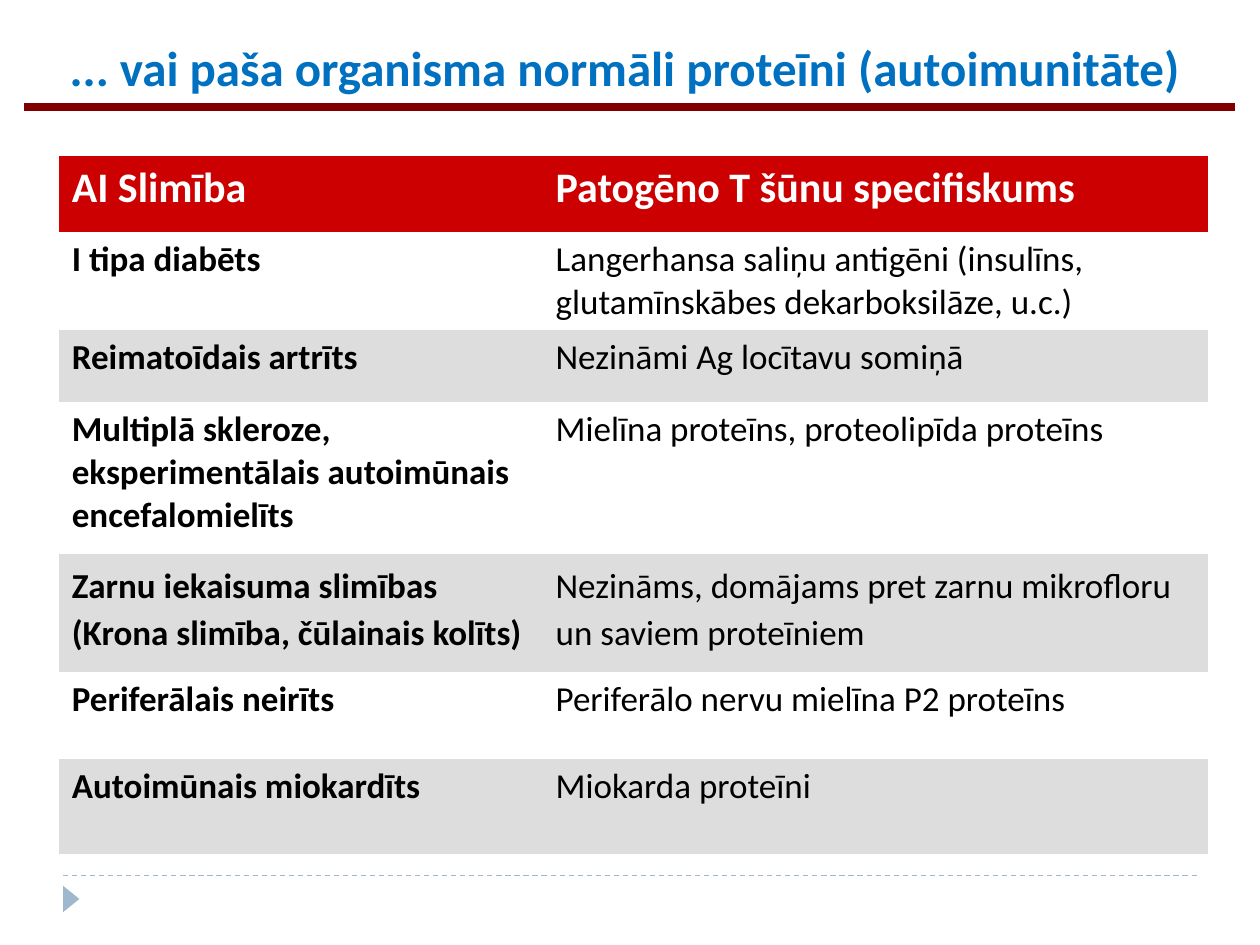
from lxml import etree
from pptx import Presentation
from pptx import util as u
from pptx.dml.color import RGBColor
from pptx.enum import dml, shapes, text
from pptx.oxml.ns import qn

WHITE = RGBColor(0xFF, 0xFF, 0xFF)
BLACK = RGBColor(0, 0, 0)
BLUE = RGBColor(0, 0x70, 0xC0)
RED = RGBColor(0xCC, 0, 0)
MAROON = RGBColor(0x80, 0, 0)
GREY = RGBColor(0xDD, 0xDD, 0xDD)
PALE_BLUE = RGBColor(0x9F, 0xB8, 0xCD)
NO_STYLE_NO_GRID = "{2D5ABB26-0587-4C30-8999-92F81FD0307C}"

HEADINGS = ("AI Slimība", "Patogēno T šūnu specifiskums")
# disease, specificity, row height in grid units, line spacing
DISEASES = [
    ("I tipa diabēts",
     "Langerhansa saliņu antigēni (insulīns, glutamīnskābes dekarboksilāze, u.c.)", 6.9, 1),
    ("Reimatoīdais artrīts", "Nezināmi Ag locītavu somiņā", 5.7, 1),
    ("Multiplā skleroze, eksperimentālais autoimūnais encefalomielīts",
     "Mielīna proteīns, proteolipīda proteīns", 12.1, 1),
    ("Zarnu iekaisuma slimības (Krona slimība, čūlainais kolīts)",
     "Nezināms, domājams pret zarnu mikrofloru un saviem proteīniem", 9.3, 1.1),
    ("Periferālais neirīts", "Periferālo nervu mielīna P2 proteīns", 6.9, 1),
    ("Autoimūnais miokardīts", "Miokarda proteīni", 7.6, 1),
]


def write(frame, words, size=20, color=BLACK, bold=False, align=text.PP_ALIGN.LEFT, spacing=1):
    frame.word_wrap = True
    paragraph = frame.paragraphs[0]
    paragraph.alignment = align
    paragraph.line_spacing = spacing
    paragraph.space_before = u.Pt(0)
    run = paragraph.add_run()
    run.text = words
    font = run.font
    font.name, font.size, font.bold = "Calibri", u.Pt(size), bold
    font.color.rgb = color


class Page:
    """A slide on a grid of 100 columns by 75 rows."""

    def __init__(self, deck):
        self.slide = deck.slides.add_slide(deck.slide_layouts[5])
        self.column = deck.slide_width / 100
        self.row = deck.slide_height / 75

    def x(self, columns):
        return u.Emu(round(columns * self.column))

    def y(self, rows):
        return u.Emu(round(rows * self.row))

    def box(self, left, top, width, height):
        return self.x(left), self.y(top), self.x(width), self.y(height)

    def title(self, words, *place):
        heading = self.slide.shapes.title
        heading.left, heading.top, heading.width, heading.height = self.box(*place)
        frame = heading.text_frame
        frame.auto_size = text.MSO_AUTO_SIZE.NONE
        frame.vertical_anchor = text.MSO_ANCHOR.TOP
        write(frame, words, size=28, color=BLUE, bold=True, align=text.PP_ALIGN.CENTER)

    def rule(self, start, end, row, color, weight, dash=None):
        """Draw a horizontal line."""
        rule = self.slide.shapes.add_connector(
            shapes.MSO_CONNECTOR.STRAIGHT, self.x(start), self.y(row), self.x(end), self.y(row))
        rule.line.color.rgb = color
        rule.line.width = u.Pt(weight)
        if dash:
            rule.line.dash_style = dash
        etree.SubElement(rule._element.spPr, qn("a:effectLst"))

    def marker(self, *place):
        """Draw a triangle pointing right."""
        marker = self.slide.shapes.add_shape(
            shapes.MSO_SHAPE.ISOSCELES_TRIANGLE, *self.box(*place))
        marker.rotation = 90
        marker.shadow.inherit = False
        marker.fill.solid()
        marker.fill.fore_color.rgb = PALE_BLUE
        marker.line.fill.background()

    def table(self, left, top, widths, heights):
        table = self.slide.shapes.add_table(
            len(heights), len(widths), *self.box(left, top, sum(widths), sum(heights))).table
        table.first_row = table.horz_banding = False
        table._tbl.tblPr.find(qn("a:tableStyleId")).text = NO_STYLE_NO_GRID
        for column, width in zip(table.columns, widths):
            column.width = self.x(width)
        for row, height in zip(table.rows, heights):
            row.height = self.y(height)
        return table

    def cell(self, cell, words, fill=None, **style):
        if fill is None:
            cell.fill.background()
        else:
            cell.fill.solid()
            cell.fill.fore_color.rgb = fill
        write(cell.text_frame, words, **style)


def main():
    deck = Presentation()
    deck.slide_width, deck.slide_height = u.Inches(10), u.Inches(7.5)
    page = Page(deck)
    page.rule(5, 95, 69.5, PALE_BLUE, 0.75, dml.MSO_LINE.DASH)
    page.marker(4.6, 70.7, 2.1, 1.3)
    page.title("... vai paša organisma normāli proteīni (autoimunitāte) ", 0, 2.5, 100, 5.7)
    page.rule(1.9, 98, 8.5, MAROON, 4.5)

    table = page.table(4.7, 12.4, (38.4, 52.8), [6] + [disease[2] for disease in DISEASES])
    for column, heading in enumerate(HEADINGS):
        page.cell(table.cell(0, column), heading, RED, size=24, color=WHITE, bold=True)
    for row, (disease, specificity, _, spacing) in enumerate(DISEASES, 1):
        band = GREY if row % 2 == 0 else None
        page.cell(table.cell(row, 0), disease, band, bold=True, spacing=spacing)
        page.cell(table.cell(row, 1), specificity, band, spacing=spacing)
    deck.save("out.pptx")


if __name__ == "__main__":
    main()
